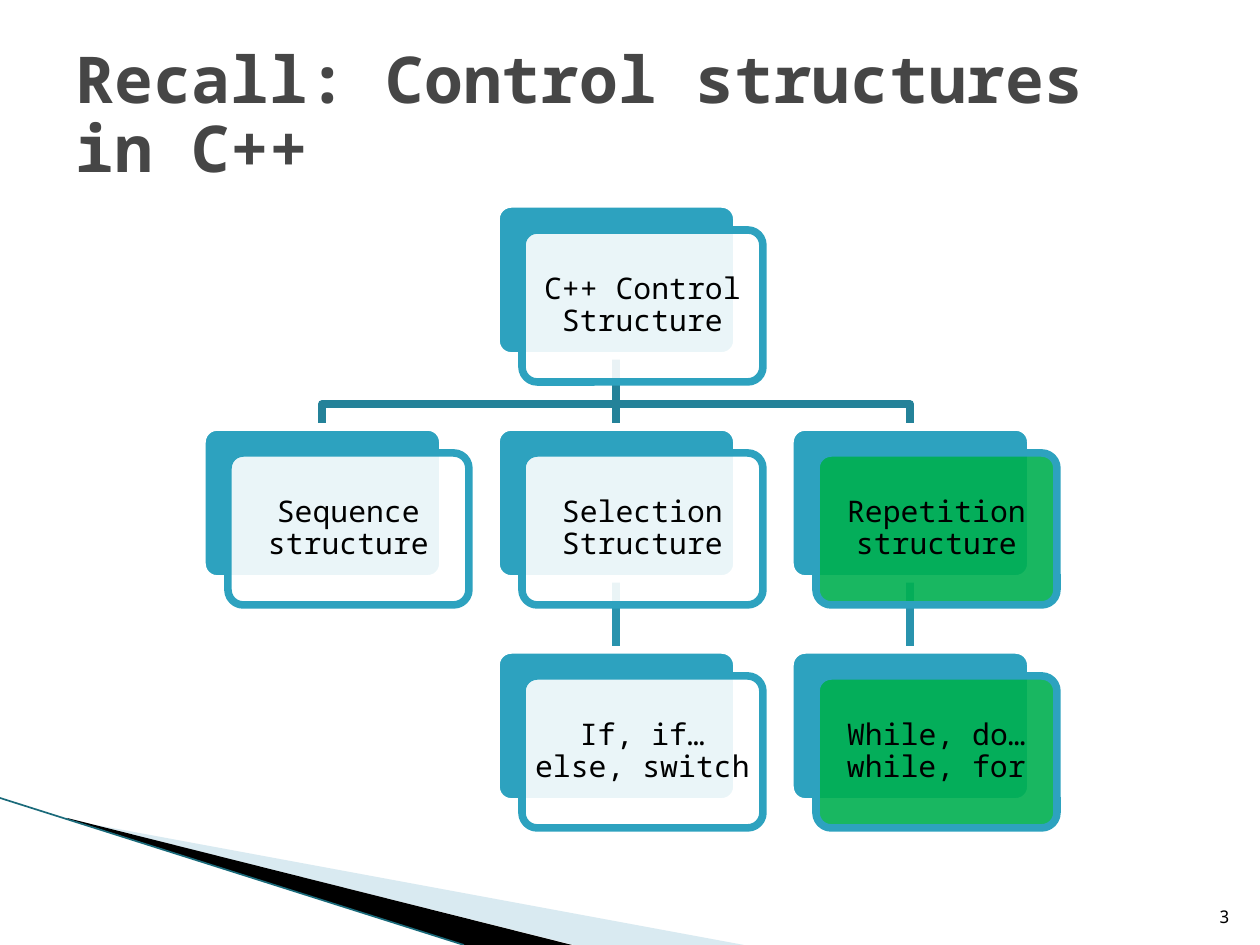
from lxml import etree
from pptx import Presentation
from pptx.dml.color import RGBColor
from pptx.enum.shapes import MSO_CONNECTOR, MSO_SHAPE
from pptx.enum.text import MSO_ANCHOR, MSO_AUTO_SIZE, PP_ALIGN
from pptx.oxml.ns import qn
from pptx.util import Pt

ROUND, LINE = MSO_SHAPE.ROUNDED_RECTANGLE, MSO_CONNECTOR.STRAIGHT
MIDDLE, BOTTOM = MSO_ANCHOR.MIDDLE, MSO_ANCHOR.BOTTOM
LEFT, CENTER, RIGHT = PP_ALIGN.LEFT, PP_ALIGN.CENTER, PP_ALIGN.RIGHT
PX = 914400 / 126

THEME = {
    "font": "Noto Sans Mono",
    "title": "464646", "text": "000000", "white": "FFFFFF",
    "teal": "2DA2BF", "green": "00B050",
    "upper": "248299", "lower": "2993AD",
    "pale": "A0CBDC", "black": "000000", "edge": "1A6A7A",
    "title_pt": 36.9, "node_pt": 17, "page_pt": 10,
    "line_pt": 4.33, "edge_pt": 0.95,
}


def paint(shape, fill=None, alpha=100, line=None, width=THEME["line_pt"]):
    """Set fill with opacity in percent, and outline; drop the shadow."""
    if fill:
        shape.fill.solid()
        shape.fill.fore_color.rgb = RGBColor.from_string(THEME[fill])
        if alpha < 100:
            color = shape.fill._xPr.find(qn("a:solidFill"))[0]
            etree.SubElement(color, qn("a:alpha"), val=str(alpha * 1000))
    elif hasattr(shape, "fill"):
        shape.fill.background()
    if line:
        shape.line.color.rgb = RGBColor.from_string(THEME[line])
        shape.line.width = Pt(width)
    else:
        shape.line.fill.background()
    if hasattr(shape, "shadow"):
        shape.shadow.inherit = False
    else:
        etree.SubElement(shape._element.spPr, qn("a:effectLst"))


def write(shape, text, size, color, align, anchor, inset=None, bold=False, lead=0.9):
    frame = shape.text_frame
    frame.text = text
    look = {"word_wrap": True, "auto_size": MSO_AUTO_SIZE.NONE, "vertical_anchor": anchor}
    if inset is not None:
        for side in ("left", "right", "top", "bottom"):
            look["margin_" + side] = round(inset * PX)
    for name, value in look.items():
        setattr(frame, name, value)
    para = frame.paragraphs[0]
    para.alignment, para.line_spacing = align, lead
    font = para.runs[0].font
    for name, value in {"name": THEME["font"], "size": Pt(THEME[size]), "bold": bold}.items():
        setattr(font, name, value)
    font.color.rgb = RGBColor.from_string(THEME[color])


deck = Presentation()
deck.slide_width, deck.slide_height = round(1260 * PX), round(945 * PX)
slide = deck.slides.add_slide(deck.slide_layouts[5])
shapes = slide.shapes

# Corner wedges
WEDGES = [
    ("pale", 40, [(69, 820), (744, 945), (574, 945), (69, 819)]),
    ("black", 100, [(67, 818), (572, 945), (464, 945), (68, 819)]),
]
for fill, alpha, points in WEDGES:
    path = shapes.build_freeform(*points[0], scale=PX)
    path.add_line_segments(points[1:])
    paint(path.convert_to_shape(), fill, alpha)
edge = shapes.add_connector(LINE, 0, round(798 * PX), round(464 * PX), round(945 * PX))
paint(edge, line="edge", width=THEME["edge_pt"])

# Title
title = shapes.title
box = {"left": 63, "top": 38, "width": 1134, "height": 158}
for name, value in box.items():
    setattr(title, name, round(value * PX))
write(title, "Recall: Control structures in C++", "title_pt", "title", LEFT, MIDDLE, bold=True)

# Tree grid: column and row give the place of each node
X, Y, COL, ROW = 202, 204, 294, 223
WIDE, HIGH, SHIFT, BUS = 241, 152, 26, 23
NODES = [
    (1, 0, "C++ Control Structure", "white"),
    (0, 1, "Sequence structure", "white"),
    (1, 1, "Selection Structure", "white"),
    (1, 2, "If, if… else, switch", "white"),
    (2, 1, "Repetition structure", "green"),
    (2, 2, "While, do…while, for", "green"),
]
# Links: parent column, child column, child row
LINKS = [(2, 2, 2), (1, 2, 1), (1, 1, 2), (1, 1, 1), (1, 0, 1)]

for parent, child, row in LINKS:
    start, end = (X + col * COL + WIDE // 2 for col in (parent, child))
    foot = Y + (row - 1) * ROW + HIGH
    head = Y + row * ROW
    if start == end:
        link = shapes.add_connector(
            LINE, *(round(n * PX) for n in (start, foot, end, head)))
    else:
        path = shapes.build_freeform(start, foot, scale=PX)
        path.add_line_segments(
            [(start, head - BUS), (end, head - BUS), (end, head)], close=False)
        link = path.convert_to_shape()
    paint(link, line="upper" if row == 1 else "lower")

for col, row, text, fill in NODES:
    for shift, tint, alpha, line in ((0, "teal", 100, "white"), (SHIFT, fill, 90, "teal")):
        place = (X + col * COL + shift, Y + row * ROW + shift, WIDE, HIGH)
        card = shapes.add_shape(ROUND, *(round(n * PX) for n in place))
        card.adjustments[0] = 0.1
        paint(card, tint, alpha, line)
    write(card, text, "node_pt", "text", CENTER, MIDDLE, inset=4)

# Page number
page = shapes.add_textbox(*(round(n * PX) for n in (1192, 883, 50, 50)))
write(page, "3", "page_pt", "text", RIGHT, BOTTOM, lead=1.0)

deck.save("out.pptx")
